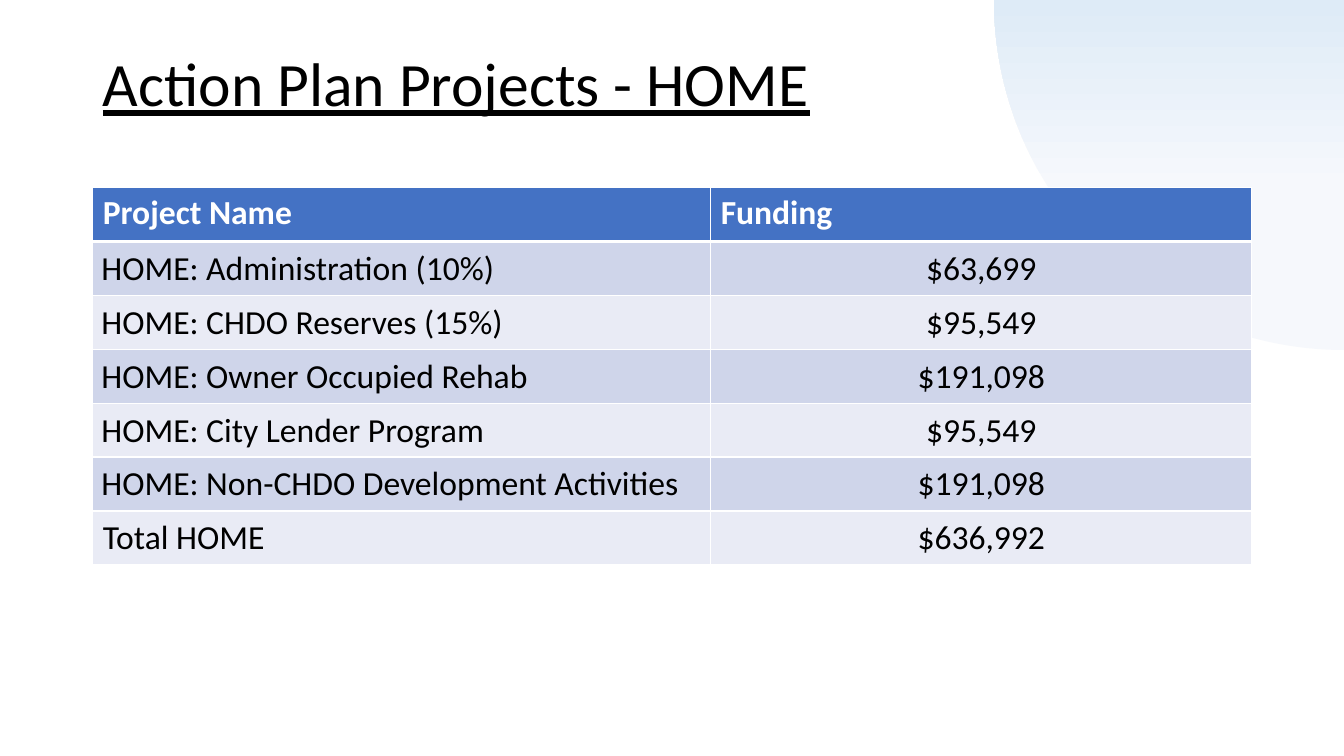
from lxml import etree
from pptx import Presentation
from pptx.dml.color import RGBColor
from pptx.enum.shapes import MSO_SHAPE
from pptx.enum.text import MSO_ANCHOR, MSO_AUTO_SIZE, PP_ALIGN
from pptx.oxml.ns import qn
from pptx.util import Pt

ARC = MSO_SHAPE.ARC
TOP, MIDDLE = MSO_ANCHOR.TOP, MSO_ANCHOR.MIDDLE
LEFT, CENTER = PP_ALIGN.LEFT, PP_ALIGN.CENTER
NO_AUTOFIT = MSO_AUTO_SIZE.NONE
TITLE_ONLY = 5

SLIDE_W, SLIDE_H = 960, 540
ARC_RADIUS = 250
ARC_STOPS = [(23, "F6F8FC"), (50, "DEEBF7"), (79, "E3EAF6"), (92, "C7D5ED")]
MARGIN = 66.24
COL_WIDTHS = [441.4, 386.6]
ROW_H = 38.5

ROWS = [
    ("Project Name", "Funding"),
    ("HOME: Administration (10%)", "$63,699"),
    ("HOME: CHDO Reserves (15%)", "$95,549"),
    ("HOME: Owner Occupied Rehab", "$191,098"),
    ("HOME: City Lender Program", "$95,549"),
    ("HOME: Non-CHDO Development Activities", "$191,098"),
    ("Total HOME", "$636,992"),
]


def rgb(value):
    return RGBColor.from_string(value)


def write(tf, text, size=24, color="000000", bold=False, underline=False,
          align=LEFT, spacing=1.0):
    p = tf.paragraphs[0]
    p.alignment, p.line_spacing = align, spacing
    r = p.add_run()
    r.text = text
    r.font.name, r.font.size = "Calibri", Pt(size)
    r.font.bold, r.font.underline = bold, underline
    r.font.color.rgb = rgb(color)


def set_borders(cell, color, **widths):
    """Draw cell edges; widths maps L, R, T and B to points."""
    tc_pr = cell._tc.get_or_add_tcPr()
    for i, (side, width) in enumerate(widths.items()):
        ln = etree.Element(qn(f"a:ln{side}"), w=str(Pt(width)))
        fill = etree.SubElement(ln, qn("a:solidFill"))
        etree.SubElement(fill, qn("a:srgbClr"), val=color)
        tc_pr.insert(i, ln)


class SlideBuilder:
    header_fill = "4472C4"
    band_fills = ["E9EBF5", "CFD5EA"]
    line_color = "FFFFFF"

    def __init__(self, slide):
        self.s = slide

    def corner_arc(self, cx, cy, radius, stops):
        """Add a gradient quarter disc behind everything else."""
        sp = self.s.shapes.add_shape(ARC, Pt(cx - radius), Pt(cy - radius),
                                     Pt(2 * radius), Pt(2 * radius))
        sp.rotation = 180
        sp.shadow.inherit = False
        sp.line.fill.background()
        sp.fill.gradient()
        sp.fill.gradient_angle = 270
        gs_list = sp._element.spPr.find(".//" + qn("a:gsLst"))
        gs_list.clear()
        for pos, color in stops:
            gs = etree.SubElement(gs_list, qn("a:gs"), pos=str(pos * 1000))
            etree.SubElement(gs, qn("a:srgbClr"), val=color)
        self.s.shapes._spTree.insert(2, sp._element)

    def title(self, text, x, y, w, h):
        sp = self.s.shapes.title
        sp.left, sp.top, sp.width, sp.height = Pt(x), Pt(y), Pt(w), Pt(h)
        tf = sp.text_frame
        tf.word_wrap, tf.auto_size = True, NO_AUTOFIT
        tf.vertical_anchor = MIDDLE
        write(tf, text, size=44, underline=True, spacing=0.9)

    def table(self, rows, x, y, col_widths, row_h):
        table = self.s.shapes.add_table(
            len(rows), len(col_widths), Pt(x), Pt(y),
            Pt(sum(col_widths)), Pt(row_h * len(rows))).table
        for column, width in zip(table.columns, col_widths):
            column.width = Pt(width)
        for i, row in enumerate(rows):
            table.rows[i].height = Pt(row_h)
            for j, text in enumerate(row):
                self.cell(table.cell(i, j), text, i, j, i == len(rows) - 1)

    def cell(self, cell, text, i, j, is_total):
        header = i == 0
        cell.fill.solid()
        cell.fill.fore_color.rgb = rgb(
            self.header_fill if header else self.band_fills[i % 2])
        cell.vertical_anchor = TOP if header else MIDDLE
        if not header and not is_total:
            cell.margin_left = Pt(6.2 if j == 0 else 0.7)
            cell.margin_right = cell.margin_top = Pt(0.7)
            cell.margin_bottom = Pt(0)
        write(cell.text_frame, text, bold=header,
              color="FFFFFF" if header else "000000",
              align=CENTER if j and not header else LEFT)
        set_borders(cell, self.line_color, L=1, R=1,
                    T=3 if i == 1 else 1, B=3 if header else 1)


def main():
    prs = Presentation()
    prs.slide_width, prs.slide_height = Pt(SLIDE_W), Pt(SLIDE_H)
    b = SlideBuilder(prs.slides.add_slide(prs.slide_layouts[TITLE_ONLY]))
    b.corner_arc(SLIDE_W, 0, ARC_RADIUS, ARC_STOPS)
    b.title("Action Plan Projects - HOME", MARGIN, 28.8, sum(COL_WIDTHS), 66.2)
    b.table(ROWS, MARGIN, 134, COL_WIDTHS, ROW_H)
    prs.save("out.pptx")


if __name__ == "__main__":
    main()
